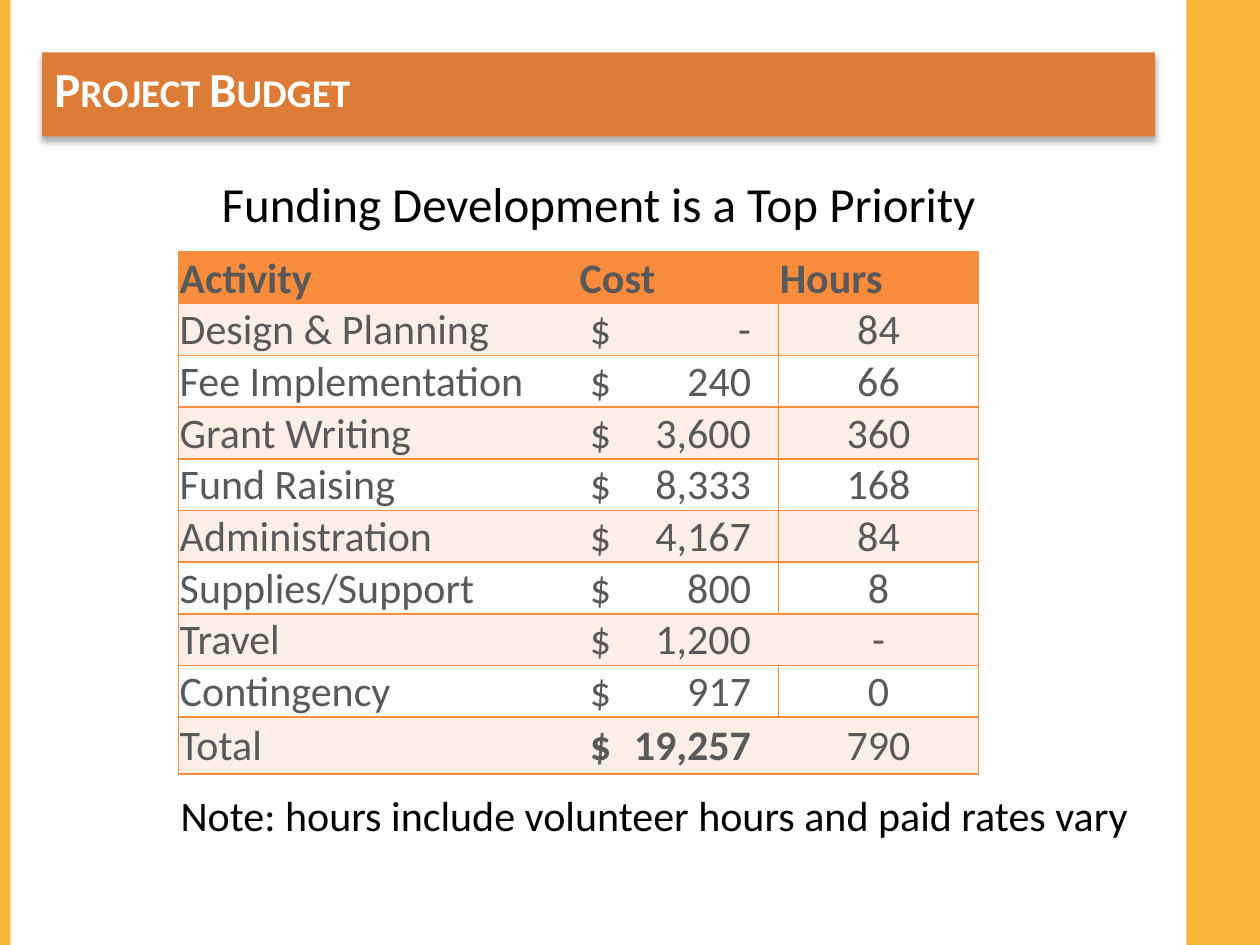
from lxml import etree
from pptx import Presentation
from pptx.dml.color import RGBColor
from pptx.enum.shapes import MSO_SHAPE
from pptx.enum.text import MSO_ANCHOR, PP_ALIGN
from pptx.oxml import parse_xml
from pptx.oxml.ns import nsdecls, qn
from pptx.util import Inches, Pt

RECTANGLE = MSO_SHAPE.RECTANGLE
TOP, MIDDLE = MSO_ANCHOR.TOP, MSO_ANCHOR.MIDDLE
LEFT, CENTER = PP_ALIGN.LEFT, PP_ALIGN.CENTER

COLUMNS, ROWS = 120, 90
UNIT = Inches(10) / COLUMNS
YELLOW, TITLE_ORANGE, TABLE_ORANGE = "F9B639", "DD7C36", "FA8D3D"
BAND, WHITE, BLACK, GREY = "FEEEE8", "FFFFFF", "000000", "595959"

HEADER = ("Activity", "Cost", "Hours")
BUDGET = [
    ("Design & Planning", "-", "84"),
    ("Fee Implementation", "240", "66"),
    ("Grant Writing", "3,600", "360"),
    ("Fund Raising", "8,333", "168"),
    ("Administration", "4,167", "84"),
    ("Supplies/Support", "800", "8"),
    ("Travel", "1,200", "-"),
    ("Contingency", "917", "0"),
    ("Total", "19,257", "790"),
]
OPEN_ROWS = ("Travel", "Total")


def grid(*cells):
    """Turn grid counts into slide lengths."""
    return [round(count * UNIT) for count in cells]


def color(value):
    """Return the colour for a hex string."""
    return RGBColor.from_string(value)


def write(frame, text, size=24, fill=BLACK, bold=False, align=LEFT, small_caps=False):
    """Write one formatted paragraph and return it."""
    para = frame.paragraphs[0]
    para.alignment = align
    span = para.add_run()
    span.text = text
    font = span.font
    font.name, font.size, font.bold = "Calibri", Pt(size), bold
    font.color.rgb = color(fill)
    if small_caps:
        font._element.set("cap", "small")
    return para


def add_block(page, box, fill):
    """Add a plain filled rectangle."""
    block = page.shapes.add_shape(RECTANGLE, *grid(*box))
    block.shadow.inherit = False
    block.fill.solid()
    block.fill.fore_color.rgb = color(fill)
    block.line.fill.background()
    return block


def add_title(page, box, text):
    """Add the title bar with its soft shadow."""
    bar = add_block(page, box, TITLE_ORANGE)
    effects = bar._element.spPr.find(qn("a:effectLst"))
    effects.append(parse_xml(
        f'<a:outerShdw {nsdecls("a")} blurRad="{Pt(3.5)}" dist="{Pt(2.2)}" dir="5400000" '
        f'rotWithShape="0"><a:srgbClr val="{BLACK}"><a:alpha val="32000"/></a:srgbClr>'
        '</a:outerShdw>'))
    bar.text_frame.vertical_anchor = TOP
    write(bar.text_frame, text, size=28, fill=WHITE, bold=True, small_caps=True)


def add_text(page, box, text, **format_options):
    """Add a text box without insets."""
    frame = page.shapes.add_textbox(*grid(*box)).text_frame
    frame.word_wrap = True
    frame.margin_left = frame.margin_right = frame.margin_top = frame.margin_bottom = 0
    write(frame, text, **format_options)


def set_borders(cell, visible):
    """Draw the visible sides of a cell and clear the others."""
    properties = cell._tc.get_or_add_tcPr()
    for index, side in enumerate("LRTB"):
        line = etree.Element(qn(f"a:ln{side}"), w=str(Pt(1)))
        if side in visible:
            paint = etree.SubElement(line, qn("a:solidFill"))
            etree.SubElement(paint, qn("a:srgbClr"), val=TABLE_ORANGE)
        else:
            etree.SubElement(line, qn("a:noFill"))
        properties.insert(index, line)


def add_tab(para, position):
    """Give a paragraph one right-aligned tab stop."""
    stops = etree.SubElement(para._p.get_or_add_pPr(), qn("a:tabLst"))
    etree.SubElement(stops, qn("a:tab"), pos=str(Inches(position)), algn="r")


def fill_row(table, index, values):
    """Fill, rule and write one row of the budget."""
    activity, cost, hours = values
    is_header = index == 0
    closed = activity not in OPEN_ROWS
    background = TABLE_ORANGE if is_header else (BAND if index % 2 else WHITE)
    cells = [table.cell(index, column) for column in range(4)]
    sides = ("LTB", "TB", "RTB" if closed else "TB", "LRTB" if closed else "RTB")
    for cell, visible in zip(cells, sides):
        cell.fill.solid()
        cell.fill.fore_color.rgb = color(background)
        cell.vertical_anchor = MIDDLE
        cell.margin_left = cell.margin_right = cell.margin_top = Inches(0.01)
        cell.margin_bottom = 0
        set_borders(cell, visible)
    if closed:
        cells[0].merge(cells[1])
    write(cells[0].text_frame, activity, fill=GREY, bold=is_header)
    cost_text = cost if is_header else f"$\t{cost}"
    para = write(cells[2].text_frame, cost_text, fill=GREY,
                 bold=is_header or activity == "Total")
    if not is_header:
        cells[2].margin_left = Inches(0.09)
        add_tab(para, 1.28)
    write(cells[3].text_frame, hours, fill=GREY, bold=is_header,
          align=LEFT if is_header else CENTER)


def add_budget(page, box):
    """Add the budget table."""
    records = [HEADER, *BUDGET]
    table = page.shapes.add_table(len(records), 4, *grid(*box)).table
    table.first_row = table.horz_banding = False
    for column in table.columns:
        column.width = grid(box[2] / 4)[0]
    for index, values in enumerate(records):
        table.rows[index].height = grid(5.4 if values[0] == "Total" else 4.7)[0]
        fill_row(table, index, values)


def build_page(page):
    """Place every region of the budget slide."""
    add_block(page, (113, 0, 7, ROWS), YELLOW)
    add_block(page, (0, 0, 1, ROWS), YELLOW)
    add_text(page, (4, 16.5, 106, 6), "Funding Development is a Top Priority",
             size=28, align=CENTER)
    add_text(page, (17.2, 75.2, 92.8, 5),
             "Note: hours include volunteer hours and paid rates vary")
    add_title(page, (4, 5, 106, 8), "Project Budget")
    add_budget(page, (17, 24, 76.2, 47.7))


def main():
    """Build and save the deck."""
    deck = Presentation()
    deck.slide_width, deck.slide_height = grid(COLUMNS, ROWS)
    build_page(deck.slides.add_slide(deck.slide_layouts[6]))
    deck.save("out.pptx")


if __name__ == "__main__":
    main()
